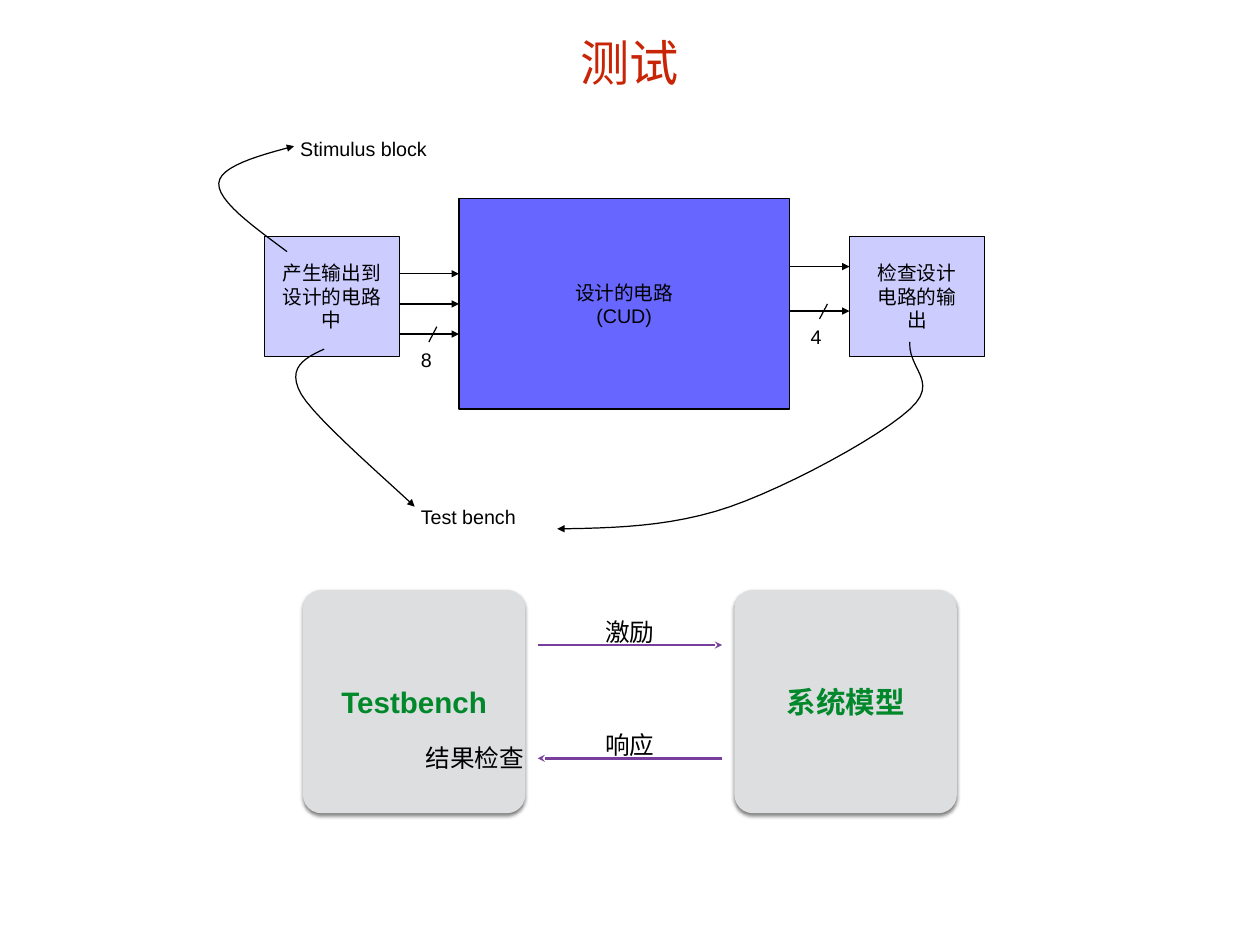
"""Build the test bench slide: circuit under design, test blocks and signals."""
import lxml.etree
import pptx
import pptx.dml.color
import pptx.enum.shapes
import pptx.enum.text
import pptx.oxml.ns
import pptx.util

Pt = pptx.util.Pt
qn = pptx.oxml.ns.qn
RGB = pptx.dml.color.RGBColor.from_string
SHAPE = pptx.enum.shapes.MSO_SHAPE
STRAIGHT = pptx.enum.shapes.MSO_CONNECTOR.STRAIGHT
ALIGN = pptx.enum.text.PP_ALIGN
ANCHOR = pptx.enum.text.MSO_ANCHOR
COLORS = {
    "title": "C82506",
    "black": "000000",
    "circuit": "6767FF",
    "block": "CCCCFF",
    "card": "DCDEE0",
    "card_text": "00882B",
    "signal": "773F9B",
}


def write(tf, lines, size, color="black", align=ALIGN.CENTER, anchor=ANCHOR.MIDDLE,
          inset=5, side=5, bold=False, wrap=True):
    tf.word_wrap = wrap
    tf.vertical_anchor = anchor
    tf.margin_top = tf.margin_bottom = Pt(inset)
    tf.margin_left = tf.margin_right = Pt(side)
    for i, line in enumerate(lines):
        p = tf.add_paragraph() if i else tf.paragraphs[0]
        p.alignment = align
        r = p.add_run()
        r.text = line
        r.font.name = "Arial"
        r.font.size = Pt(size)
        r.font.bold = bold
        r.font.color.rgb = RGB(COLORS[color])


def stroke(sp, color="black", width=1, arrow=None):
    sp.line.color.rgb = RGB(COLORS[color])
    sp.line.width = Pt(width)
    spPr = sp.element.spPr
    if arrow:
        lxml.etree.SubElement(spPr.get_or_add_ln(), qn("a:tailEnd"), type=arrow)
    lxml.etree.SubElement(spPr, qn("a:effectLst"))


prs = pptx.Presentation()
prs.slide_width, prs.slide_height = Pt(1024), Pt(768)
s = prs.slides.add_slide(prs.slide_layouts[5])

title = s.shapes.title
title.left, title.top, title.width, title.height = Pt(51), Pt(0), Pt(922), Pt(101)
write(title.text_frame, ["测试"], 40, "title")

blocks = []
for x, y, w, h, fill, side, lines in [
    (373, 161.5, 268.6, 171, "circuit", 47, ["设计的电路", "(CUD)"]),
    (214.8, 192.3, 109.7, 97.2, "block", 10.5, ["产生输出到设计的电路中"]),
    (690.4, 192.3, 109.7, 97.2, "block", 17.5, ["检查设计电路的输出"]),
]:
    sp = s.shapes.add_shape(SHAPE.RECTANGLE, Pt(x), Pt(y), Pt(w), Pt(h))
    sp.fill.solid()
    sp.fill.fore_color.rgb = RGB(COLORS[fill])
    stroke(sp)
    write(sp.text_frame, lines, 16, side=side)
    blocks.append(sp)
circuit = blocks[0]

for y in (222.5, 247, 271.5):
    cxn = s.shapes.add_connector(STRAIGHT, Pt(324.5), Pt(y), Pt(373), Pt(y))
    if y == 247:
        cxn.end_connect(circuit, 1)
    stroke(cxn, arrow="triangle")

for x1, y1, x2, y2, color, width, arrow in [
    (641.6, 216.7, 690.4, 216.7, "black", 1, "triangle"),
    (641.6, 252.8, 690.4, 252.8, "black", 1, "triangle"),
    (355, 265.5, 348.5, 278, "black", 1, None),
    (672.5, 247, 666, 259.2, "black", 1, None),
    (437, 524.2, 586.8, 524.2, "signal", 2, "stealth"),
    (586.8, 616.3, 437, 616.3, "signal", 2, "stealth"),
]:
    cxn = s.shapes.add_connector(STRAIGHT, Pt(x1), Pt(y1), Pt(x2), Pt(y2))
    stroke(cxn, color, width, arrow)

STEPS = 12
for nodes in [
    [(263.5, 283.7), (247.7, 290.9), (232.6, 298.8), (244.8, 320.4),
     (257, 341.3), (321.8, 396.7), (337, 411.8)],
    [(739.4, 277.9), (738, 300.2), (763.9, 310.3), (739.4, 332.6),
     (715, 355), (640.8, 395.3), (593.3, 411.8),
     (545, 428.4), (497.5, 429.1), (452.9, 429.8)],
    [(233.3, 204.5), (205.2, 183.6), (177.1, 163.4), (177.8, 149),
     (178.6, 135.4), (208.8, 126.7), (239, 118.8)],
]:
    points = []
    for i in range(0, len(nodes) - 1, 3):
        for k in range(1, STEPS + 1):
            t = k / STEPS
            weights = ((1 - t) ** 3, 3 * t * (1 - t) ** 2, 3 * t * t * (1 - t), t ** 3)
            points.append(tuple(
                Pt(sum(c * n[axis] for c, n in zip(weights, nodes[i:i + 4])))
                for axis in (0, 1)))
    fb = s.shapes.build_freeform(Pt(nodes[0][0]), Pt(nodes[0][1]))
    fb.add_line_segments(points, close=False)
    sp = fb.convert_to_shape()
    sp.fill.background()
    stroke(sp, arrow="triangle")

for x, text in [(246.2, "Testbench"), (596.9, "系统模型")]:
    sp = s.shapes.add_shape(SHAPE.ROUNDED_RECTANGLE, Pt(x), Pt(479.5), Pt(180.7), Pt(181.4))
    sp.adjustments[0] = 0.083
    sp.fill.solid()
    sp.fill.fore_color.rgb = RGB(COLORS["card"])
    sp.line.fill.background()
    sp.shadow.inherit = False
    effects = sp.element.spPr.find(qn("a:effectLst"))
    shadow = lxml.etree.SubElement(effects, qn("a:outerShdw"), blurRad=str(Pt(3)),
                                   dist=str(Pt(2)), dir="5400000", rotWithShape="0")
    clr = lxml.etree.SubElement(shadow, qn("a:srgbClr"), val=COLORS["black"])
    lxml.etree.SubElement(clr, qn("a:alpha"), val="50000")
    write(sp.text_frame, [text], 24, "card_text", bold=True)

for x, y, w, text in [
    (337, 278, 24.5, "8"),
    (653.8, 259.2, 24.5, "4"),
    (337, 405.4, 116, "Test bench"),
    (239, 106.6, 146, "Stimulus block"),
]:
    sp = s.shapes.add_textbox(Pt(x), Pt(y), Pt(w), Pt(28))
    write(sp.text_frame, [text], 16, align=ALIGN.LEFT, anchor=ANCHOR.TOP)

for x, y, w, text in [
    (487.4, 499, 49, "激励"),
    (487.4, 591.1, 49, "响应"),
    (341.3, 602, 89.3, "结果检查"),
]:
    sp = s.shapes.add_textbox(Pt(x), Pt(y), Pt(w), Pt(28))
    write(sp.text_frame, [text], 20, inset=4.3, side=4.3, wrap=False)

prs.save("out.pptx")
